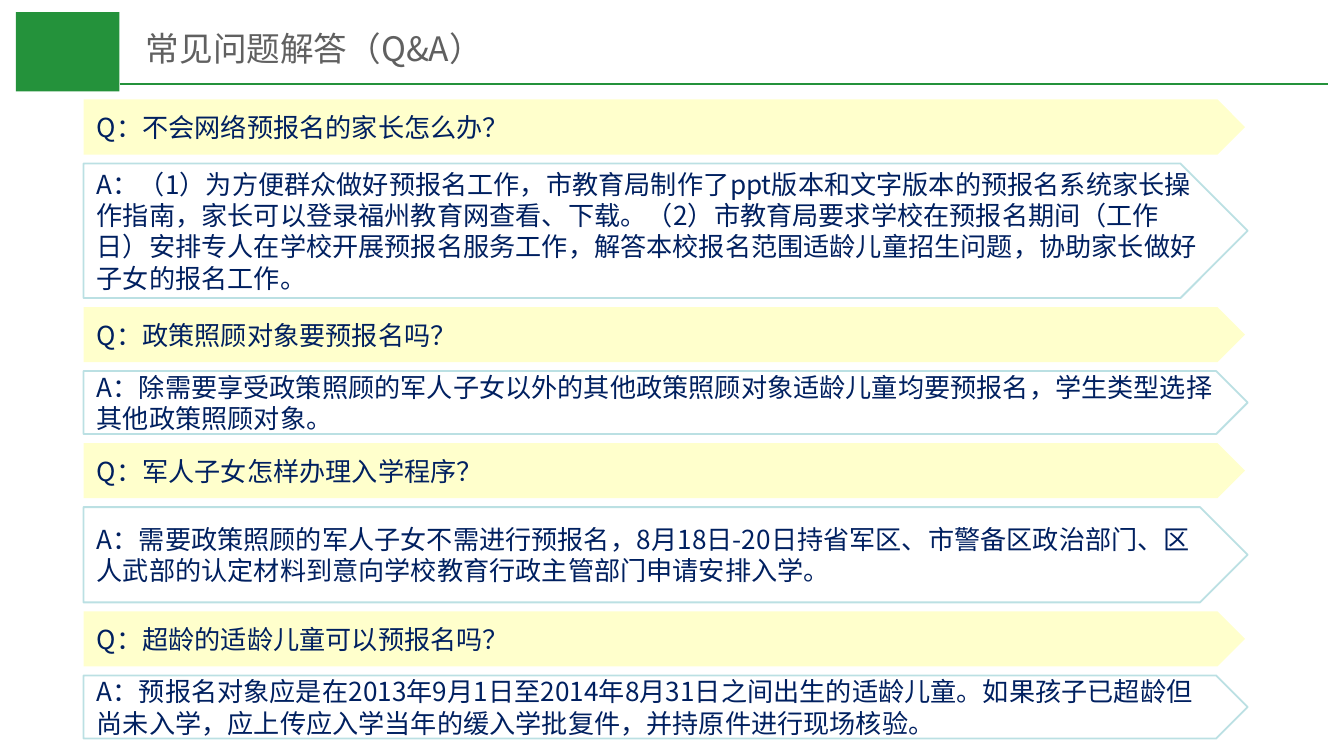
from lxml.etree import SubElement
from pptx import Presentation
from pptx.dml.color import RGBColor
from pptx.enum.shapes import MSO_CONNECTOR, MSO_SHAPE
from pptx.enum.text import MSO_ANCHOR, PP_ALIGN
from pptx.oxml.ns import qn
from pptx.util import Cm, Pt

GREEN = RGBColor(0x24, 0x92, 0x3B)
GREY = RGBColor(0x60, 0x60, 0x60)
NAVY = RGBColor(0x00, 0x20, 0x60)
CREAM = RGBColor(0xFF, 0xFF, 0xCC)
PALE_BLUE = RGBColor(0xBB, 0xE0, 0xE3)
FONT = "Noto Sans CJK SC"

LEFT, TOP, GAP = 1.58, 1.88, 0.17
QUESTION_WIDTH, QUESTION_HEIGHT = 21.95, 1.04
ANSWER_WIDTH = 22

# question, answer, height of the answer in cm
QA = [
    ("Q：不会网络预报名的家长怎么办？",
     "A：（1）为方便群众做好预报名工作，市教育局制作了ppt版本和文字版本的预报名系统家长操作指南，"
     "家长可以登录福州教育网查看、下载。（2）市教育局要求学校在预报名期间（工作日）安排专人在学校"
     "开展预报名服务工作，解答本校报名范围适龄儿童招生问题，协助家长做好子女的报名工作。", 2.54),
    ("Q：政策照顾对象要预报名吗？",
     "A：除需要享受政策照顾的军人子女以外的其他政策照顾对象适龄儿童均要预报名，"
     "学生类型选择其他政策照顾对象。", 1.19),
    ("Q：军人子女怎样办理入学程序？",
     "A：需要政策照顾的军人子女不需进行预报名，8月18日-20日持省军区、市警备区政治部门、"
     "区人武部的认定材料到意向学校教育行政主管部门申请安排入学。", 1.8),
    ("Q：超龄的适龄儿童可以预报名吗？",
     "A：预报名对象应是在2013年9月1日至2014年8月31日之间出生的适龄儿童。"
     "如果孩子已超龄但尚未入学，应上传应入学当年的缓入学批复件，并持原件进行现场核验。", 1.19),
]


def write(tf, text, size, color):
    tf.word_wrap = True
    tf.vertical_anchor = MSO_ANCHOR.MIDDLE
    p = tf.paragraphs[0]
    p.alignment = PP_ALIGN.LEFT
    p.line_spacing = Pt(size * 1.2)
    r = p.add_run()
    r.text = text
    r.font.size = Pt(size)
    r.font.name = FONT
    r.font.color.rgb = color
    SubElement(r.font._element, qn("a:ea"), typeface=FONT)


def add_shape(s, kind, left, top, width, height, fill=None, line=None):
    sp = s.shapes.add_shape(kind, Cm(left), Cm(top), Cm(width), Cm(height))
    sp.shadow.inherit = False
    if fill is None:
        sp.fill.background()
    else:
        sp.fill.solid()
        sp.fill.fore_color.rgb = fill
    if line is None:
        sp.line.fill.background()
    else:
        sp.line.color.rgb = line
        sp.line.width = Pt(1)
    return sp


def add_header(s):
    add_shape(s, MSO_SHAPE.RECTANGLE, 0.3, 0.23, 1.96, 1.5, fill=GREEN)
    rule = s.shapes.add_connector(MSO_CONNECTOR.STRAIGHT,
                                  Cm(2.26), Cm(1.58), Cm(25.1), Cm(1.58))
    rule.line.color.rgb = GREEN
    rule.line.width = Pt(1)
    SubElement(rule._element.spPr, qn("a:effectLst"))
    title = s.shapes.add_textbox(Cm(2.51), Cm(0.48), Cm(21.6), Cm(0.86))
    write(title.text_frame, "常见问题解答（Q&A）", 18, GREY)


def add_banner(s, text, top, width, height, fill=None, line=None):
    sp = add_shape(s, MSO_SHAPE.PENTAGON, LEFT, top, width, height, fill, line)
    write(sp.text_frame, text, 14, NAVY)


def main():
    prs = Presentation()
    prs.slide_width, prs.slide_height = Cm(25.4), Cm(14.28)
    s = prs.slides.add_slide(prs.slide_layouts[6])
    add_header(s)
    top = TOP
    for question, answer, height in QA:
        add_banner(s, question, top, QUESTION_WIDTH, QUESTION_HEIGHT, fill=CREAM)
        top += QUESTION_HEIGHT + GAP
        add_banner(s, answer, top, ANSWER_WIDTH, height, line=PALE_BLUE)
        top += height + GAP
    prs.save("out.pptx")


if __name__ == "__main__":
    main()
